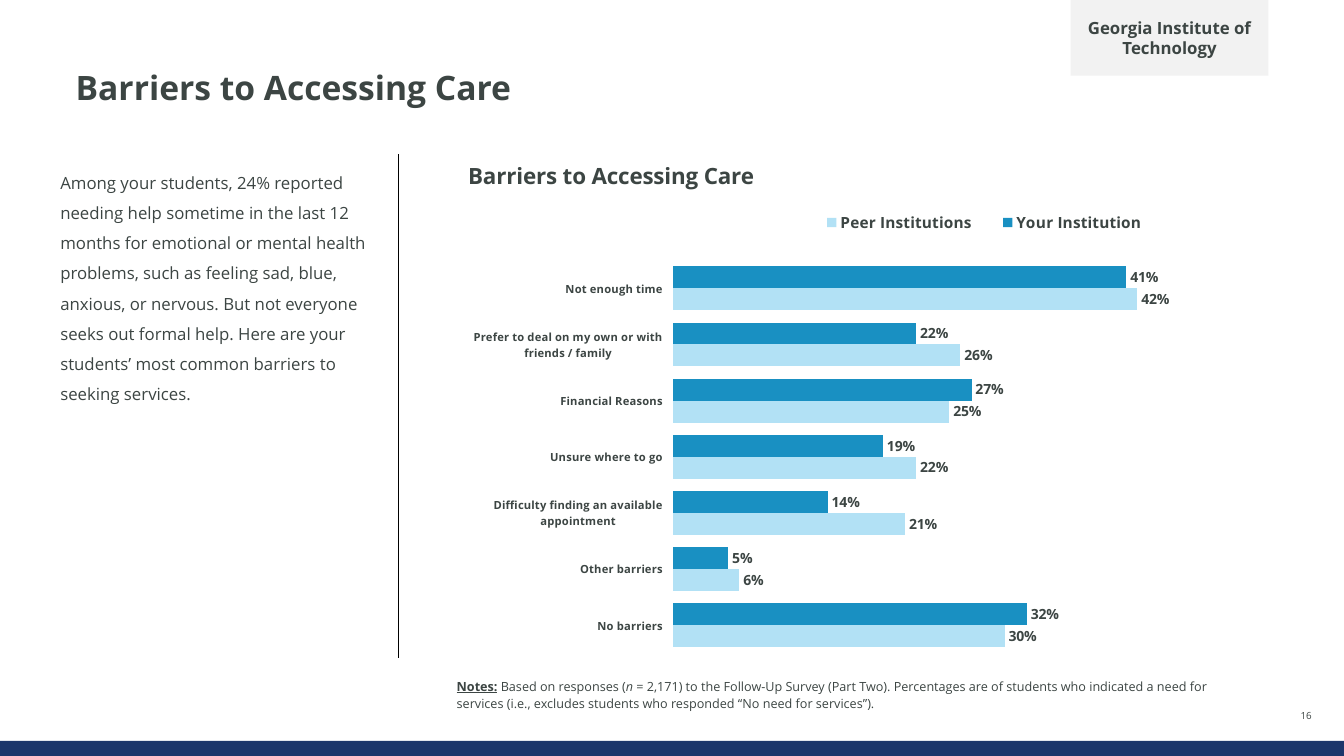
import pptx
import pptx.util
import pptx.dml.color
import pptx.chart.data
import pptx.enum.chart
import pptx.enum.shapes
import pptx.enum.text
import pptx.oxml
import pptx.oxml.ns

Inches, Pt = pptx.util.Inches, pptx.util.Pt
Chart = pptx.enum.chart
Align, Anchor = pptx.enum.text.PP_ALIGN, pptx.enum.text.MSO_ANCHOR
INK = "3C4543"


def color(code):
    return pptx.dml.color.RGBColor.from_string(code)


def style(font, size, bold=False):
    font.name, font.size, font.bold = "Open Sans", Pt(size), bold
    font.color.rgb = color(INK)


deck = pptx.Presentation()
deck.slide_width, deck.slide_height = Inches(13.33), Inches(7.5)
slide = deck.slides.add_slide(deck.slide_layouts[5])
shapes = slide.shapes

# Title
title = shapes.title
title.left, title.top = Inches(0.75), Inches(0.71)
title.width, title.height = Inches(11.83), Inches(0.7)
frame = title.text_frame
frame.text = "Barriers to Accessing Care"
frame.vertical_anchor = Anchor.TOP
frame.margin_left = frame.margin_right = frame.margin_top = frame.margin_bottom = 0
para = frame.paragraphs[0]
para.alignment, para.line_spacing = Align.LEFT, 0.9
style(para.font, 24, True)

# Footer band and school tag
boxes = []
for left, top, width, height, fill in [
    (0, 7.35, 13.33, 0.15, "1C366B"),
    (10.62, 0, 1.96, 0.75, "F2F2F2"),
]:
    box = shapes.add_shape(pptx.enum.shapes.MSO_SHAPE.RECTANGLE,
                           Inches(left), Inches(top), Inches(width), Inches(height))
    box.shadow.inherit = False
    box.fill.solid()
    box.fill.fore_color.rgb = color(fill)
    box.line.fill.background()
    boxes.append(box)
frame = boxes[1].text_frame
frame.text = "Georgia Institute of Technology"
frame.word_wrap, frame.vertical_anchor = True, Anchor.MIDDLE
frame.margin_top = frame.margin_bottom = 0
frame.paragraphs[0].alignment = Align.CENTER
style(frame.paragraphs[0].font, 12, True)

# Intro text
frame = shapes.add_textbox(Inches(0.5), Inches(1.56), Inches(3.27), Inches(3.05)).text_frame
frame.word_wrap = True
frame.text = (
    "Among your students, 24% reported needing help sometime in the last 12 months "
    "for emotional or mental health problems, such as feeling sad, blue, anxious, "
    "or nervous. But not everyone seeks out formal help. Here are your students’ "
    "most common barriers to seeking services."
)
para = frame.paragraphs[0]
para.line_spacing = 1.5
style(para.font, 12)

# Divider
line = shapes.add_connector(pptx.enum.shapes.MSO_CONNECTOR.STRAIGHT,
                            Inches(3.95), Inches(1.53), Inches(3.95), Inches(6.53))
line.line.color.rgb = color("000000")
line.line.width = Pt(1)
line._element.spPr.append(pptx.oxml.parse_xml(
    f'<a:effectLst {pptx.oxml.ns.nsdecls("a")}/>'))

# Bar chart
data = pptx.chart.data.CategoryChartData(number_format="0%")
data.categories = [
    "Not enough time",
    "Prefer to deal on my own or with friends / family",
    "Financial Reasons",
    "Unsure where to go",
    "Difficulty finding an available appointment",
    "Other barriers",
    "No barriers",
]
data.add_series("Your Institution", [0.41, 0.22, 0.27, 0.19, 0.14, 0.05, 0.32])
data.add_series("Peer Institutions", [0.42, 0.26, 0.25, 0.22, 0.21, 0.06, 0.3])
chart = shapes.add_chart(Chart.XL_CHART_TYPE.BAR_CLUSTERED, Inches(4.53), Inches(1.48),
                         Inches(7.27), Inches(5.2), data).chart
style(chart.font, 8)

chart.has_title = True
chart.chart_title.text_frame.text = "Barriers to Accessing Care"
style(chart.chart_title.text_frame.paragraphs[0].font, 16, True)
chart.chart_title.include_in_layout = False

chart.has_legend = True
chart.legend.position = Chart.XL_LEGEND_POSITION.TOP
chart.legend.include_in_layout = False
style(chart.legend.font, 11, True)

axis = chart.category_axis
axis.reverse_order = True
axis.format.line.fill.background()
style(axis.tick_labels.font, 8, True)
scale = chart.value_axis
scale.minimum_scale, scale.maximum_scale = 0, 0.45
scale.has_major_gridlines = False
scale.visible = False

plot = chart.plots[0]
plot.gap_width, plot.overlap, plot.vary_by_categories = 56, 0, False
for series, fill in zip(plot.series, ["1990C2", "B2E1F5"]):
    series.format.fill.solid()
    series.format.fill.fore_color.rgb = color(fill)
    labels = series.data_labels
    labels.show_value = True
    labels.position = Chart.XL_LABEL_POSITION.OUTSIDE_END
    labels.number_format, labels.number_format_is_linked = "0%", False
    style(labels.font, 10, True)

# Fixed places for the chart parts, as shares of the chart
root = chart._chartSpace.chart
for part, after, inner, place in [
    (root.find(pptx.oxml.ns.qn("c:title")), "tx", "", {"x": 0.01, "y": 0.01}),
    (root.plotArea, None, '<c:layoutTarget val="inner"/>',
     {"x": 0.295, "y": 0.212, "w": 0.679, "h": 0.75}),
    (chart.legend._element, "legendPos", "",
     {"x": 0.47, "y": 0.1, "w": 0.5, "h": 0.08}),
]:
    for old in part.findall(pptx.oxml.ns.qn("c:layout")):
        part.remove(old)
    modes = "".join(f'<c:{key}Mode val="edge"/>' for key in "xy")
    sizes = "".join(f'<c:{key} val="{share}"/>' for key, share in place.items())
    layout = pptx.oxml.parse_xml(
        f'<c:layout {pptx.oxml.ns.nsdecls("c")}><c:manualLayout>'
        f'{inner}{modes}{sizes}</c:manualLayout></c:layout>')
    if after:
        part.find(pptx.oxml.ns.qn(f"c:{after}")).addnext(layout)
    else:
        part.insert(0, layout)

# Notes and page number
for left, top, width, height, size, align, runs in [
    (4.53, 6.73, 7.55, 0.32, 9, Align.LEFT, [
        "Notes:", " Based on responses (", "n",
        " = 2,171) to the Follow-Up Survey (Part Two). Percentages are of students who "
        "indicated a need for services (i.e., excludes students who responded “No need "
        "for services”)."]),
    (12.7, 7.01, 0.51, 0.15, 7, Align.CENTER, ["16"]),
]:
    frame = shapes.add_textbox(Inches(left), Inches(top), Inches(width), Inches(height)).text_frame
    frame.word_wrap, frame.vertical_anchor = True, Anchor.BOTTOM
    frame.margin_left = frame.margin_right = frame.margin_top = frame.margin_bottom = 0
    para = frame.paragraphs[0]
    para.alignment = align
    style(para.font, size)
    if size == 9:
        para.line_spacing, para.space_after = Pt(12), Pt(2)
    for text in runs:
        run = para.add_run()
        run.text = text
        if text == "Notes:":
            run.font.bold = run.font.underline = True
        elif text == "n":
            run.font.italic = True

deck.save("out.pptx")
